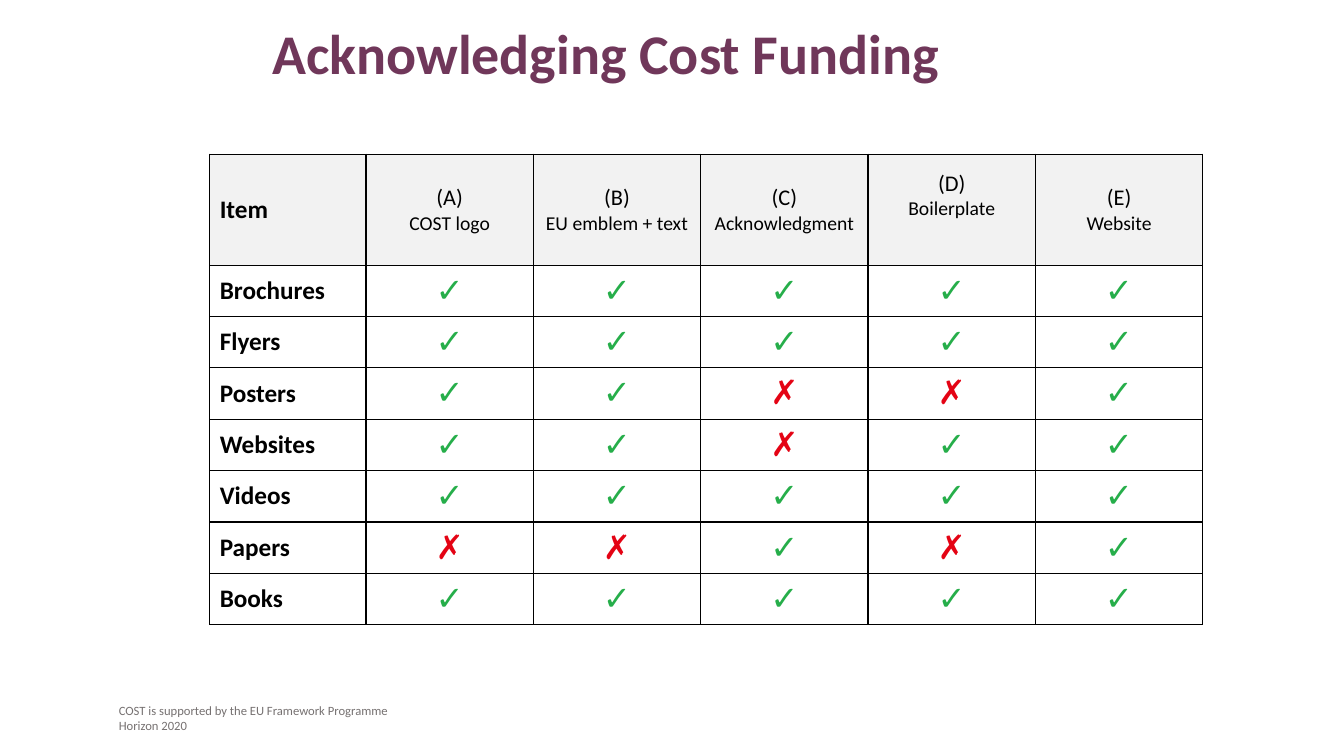
from dataclasses import dataclass

from lxml import etree
from pptx import Presentation
from pptx import util as u
from pptx.dml.color import RGBColor
from pptx.enum import text
from pptx.oxml import ns


@dataclass(frozen=True)
class Theme:
    font: str = "Calibri"
    title: str = "70375A"
    ink: str = "000000"
    note: str = "767171"
    header: str = "F2F2F2"
    body: str = "FFFFFF"
    yes: str = "26AE4A"
    no: str = "E40314"
    title_size: int = 40
    mark_size: int = 24
    item_size: int = 18
    letter_size: int = 16
    label_size: int = 14
    note_size: int = 9


class Deck:
    """Holds the theme and the current slide, and adds elements to it."""

    def __init__(self, theme):
        self.theme = theme
        self.prs = Presentation()
        self.prs.slide_width, self.prs.slide_height = u.Inches(13.33), u.Inches(7.5)
        self.s = self.prs.slides.add_slide(self.prs.slide_layouts[5])

    def add_lines(self, tf, lines, align=text.PP_ALIGN.LEFT):
        for i, (line, size, color, bold) in enumerate(lines):
            p = tf.add_paragraph() if i else tf.paragraphs[0]
            p.alignment = align
            r = p.add_run()
            r.text = line
            fmt = {"name": self.theme.font, "size": u.Pt(size), "bold": bold}
            for key, value in fmt.items():
                setattr(r.font, key, value)
            r.font.color.rgb = RGBColor.from_string(color)

    def title(self, line, box):
        sp = self.s.shapes.title
        for key, value in zip(("left", "top", "width", "height"), box):
            setattr(sp, key, u.Inches(value))
        tf = sp.text_frame
        fmt = {"word_wrap": True, "vertical_anchor": text.MSO_ANCHOR.TOP,
               "auto_size": text.MSO_AUTO_SIZE.NONE}
        for key, value in fmt.items():
            setattr(tf, key, value)
        self.add_lines(tf, [(line, self.theme.title_size, self.theme.title, True)])

    def note(self, lines, box):
        tf = self.s.shapes.add_textbox(*map(u.Inches, box)).text_frame
        tf.word_wrap = True
        self.add_lines(tf, [(line, self.theme.note_size, self.theme.note, False)
                            for line in lines])

    def table(self, box, col_widths, row_heights):
        tbl = self.s.shapes.add_table(
            len(row_heights), len(col_widths), *map(u.Inches, box)).table
        tbl.first_row = tbl.horz_banding = False
        for col, width in zip(tbl.columns, col_widths):
            col.width = u.Inches(width)
        for row, height in zip(tbl.rows, row_heights):
            row.height = u.Inches(height)
        return tbl

    def cell(self, c, lines, fill, align=text.PP_ALIGN.CENTER):
        c.vertical_anchor = text.MSO_ANCHOR.MIDDLE
        tcPr = c._tc.get_or_add_tcPr()
        for side in ("lnL", "lnR", "lnT", "lnB"):
            ln = etree.SubElement(tcPr, ns.qn(f"a:{side}"), w=str(u.Pt(1)))
            solid = etree.SubElement(ln, ns.qn("a:solidFill"))
            etree.SubElement(solid, ns.qn("a:srgbClr"), val=self.theme.ink)
        c.fill.solid()
        c.fill.fore_color.rgb = RGBColor.from_string(fill)
        self.add_lines(c.text_frame, lines, align)


COLUMNS = ["COST logo", "EU emblem + text", "Acknowledgment", "Boilerplate", "Website"]
ITEMS = {
    "Brochures": "✓✓✓✓✓",
    "Flyers": "✓✓✓✓✓",
    "Posters": "✓✓✗✗✓",
    "Websites": "✓✓✗✓✓",
    "Videos": "✓✓✓✓✓",
    "Papers": "✗✗✓✗✓",
    "Books": "✓✓✓✓✓",
}


def main():
    t = Theme()
    deck = Deck(t)
    deck.note(["COST is supported by the EU Framework Programme", "Horizon 2020"],
              (1.08, 6.92, 3.14, 0.4))
    deck.title("Acknowledging Cost Funding", (2.6, 0.13, 9.07, 0.77))

    tbl = deck.table((2.08, 1.53, 9.87, 4.69), [1.55] + [1.66] * len(COLUMNS),
                     [1.1] + [0.51] * len(ITEMS))
    for i, item in enumerate(["Item", *ITEMS]):
        deck.cell(tbl.cell(i, 0), [(item, t.item_size, t.ink, True)],
                  t.body if i else t.header, text.PP_ALIGN.LEFT)
    for j, (letter, label) in enumerate(zip("ABCDE", COLUMNS), 1):
        deck.cell(tbl.cell(0, j), [(f"({letter})", t.letter_size, t.ink, False),
                                   (label, t.label_size, t.ink, False)], t.header)
    tbl.cell(0, COLUMNS.index("Boilerplate") + 1).margin_bottom = u.Inches(0.33)
    for i, marks in enumerate(ITEMS.values(), 1):
        for j, mark in enumerate(marks, 1):
            color = t.yes if mark == "✓" else t.no
            deck.cell(tbl.cell(i, j), [(mark, t.mark_size, color, False)], t.body)

    deck.prs.save("out.pptx")


if __name__ == "__main__":
    main()
